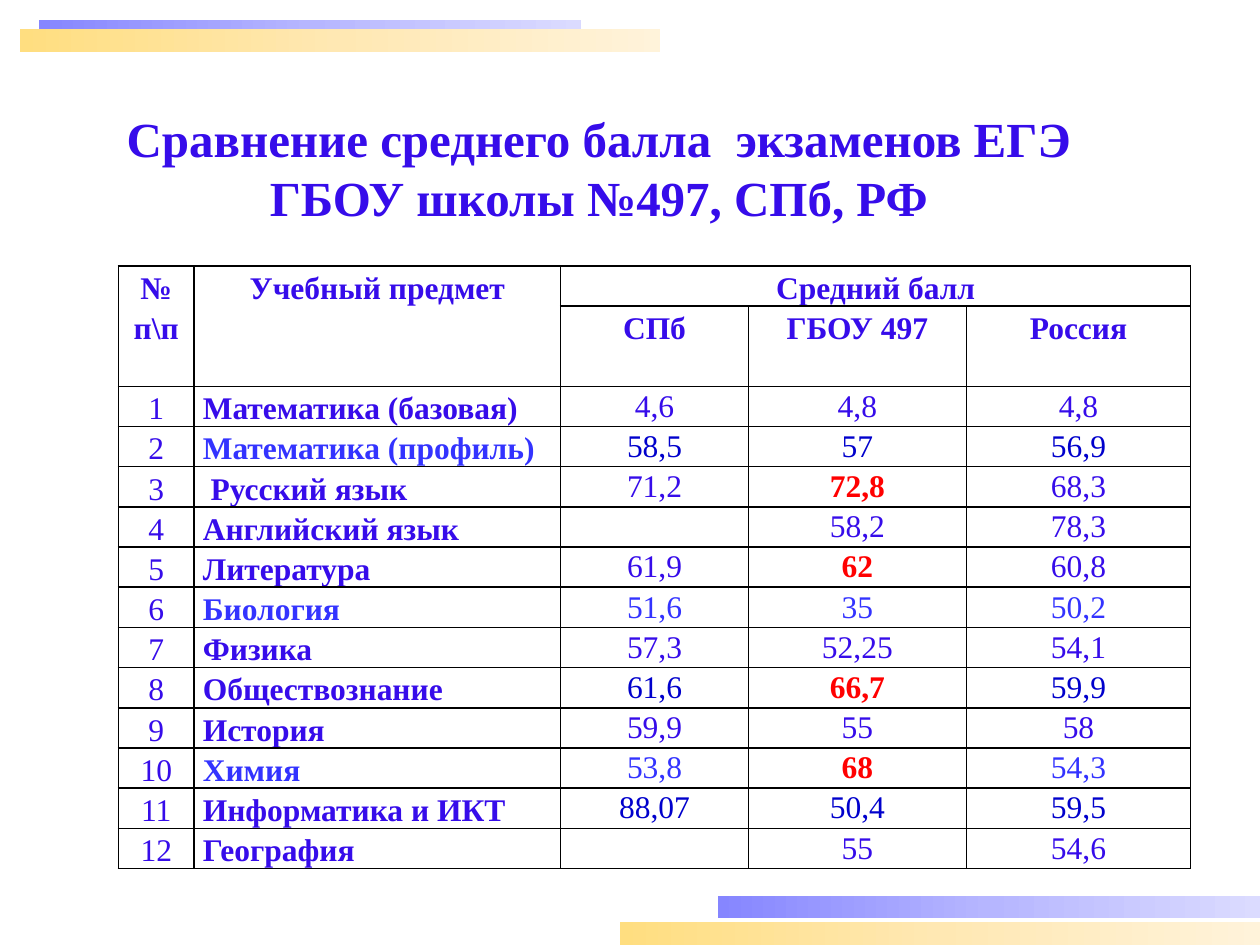
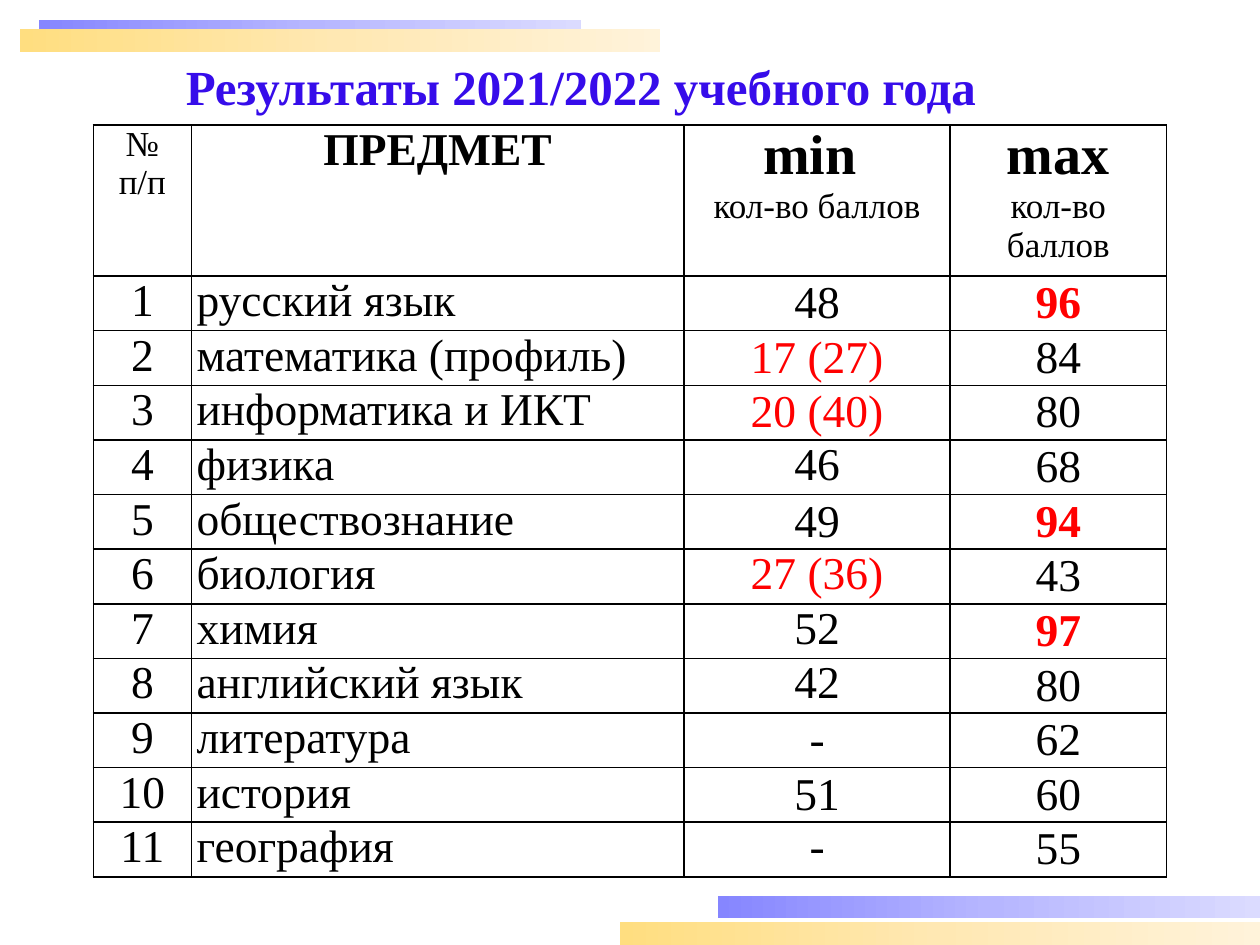
from copy import deepcopy

from lxml import etree
from pptx import Presentation
from pptx.dml.color import RGBColor
from pptx.enum import shapes, text
from pptx.oxml.ns import qn
from pptx.util import Inches, Pt

FONT = "Times New Roman"
INDIGO = RGBColor(0x36, 0x0C, 0xEA)
BLUE = RGBColor(0x33, 0x33, 0xFF)
NAVY = RGBColor(0x00, 0x00, 0xCC)
RED = RGBColor(0xFF, 0x00, 0x00)
BLACK = RGBColor(0x00, 0x00, 0x00)
VIOLET_FADE = [RGBColor.from_string(c) for c in ("8686FF", "B6B6FF", "DBDBFF")]
YELLOW_FADE = [RGBColor.from_string(c) for c in ("FFDE80", "FFE8B3", "FFF3DA")]

CENTER, LEFT = text.PP_ALIGN.CENTER, text.PP_ALIGN.LEFT
TOP, MIDDLE = text.MSO_ANCHOR.TOP, text.MSO_ANCHOR.MIDDLE

# left, top, width, colours
BANDS = [
    (0.31, 0.16, 4.3, VIOLET_FADE),
    (0.16, 0.23, 5.08, YELLOW_FADE),
    (5.7, 7.11, 4.3, VIOLET_FADE),
    (4.92, 7.32, 5.08, YELLOW_FADE),
]
BAND_HEIGHT = 0.18

TITLE_STYLE = {"size": Pt(28), "bold": True, "color": INDIGO}
LOOSE_LINE = Pt(22.9)

COMPARISON = {
    "title": ["Сравнение среднего балла  экзаменов ЕГЭ ", "ГБОУ школы №497, СПб, РФ "],
    "title_at": (-0.2, 0.86),
    "table_at": (0.94, 2.11),
    "columns": [0.6, 2.91, 1.49, 1.73, 1.78],
    "header_rows": [0.32, 0.63],
    "height": 4.78,
}
# row, column, lines
COMPARISON_HEADER = [
    (0, 0, ["№", "п\\п"]),
    (0, 1, ["Учебный предмет"]),
    (0, 2, ["Средний балл"]),
    (1, 2, ["СПб"]),
    (1, 3, ["ГБОУ 497"]),
    (1, 4, ["Россия"]),
]
COMPARISON_MERGES = [((0, 0), (1, 0)), ((0, 1), (1, 1)), ((0, 2), (0, 4))]
# subject, its colour, score colour, scores in city / school / country
AVERAGES = [
    ("Математика (базовая)", INDIGO, INDIGO, ("4,6", "4,8", "4,8")),
    ("Математика (профиль)", BLUE, NAVY, ("58,5", "57", "56,9")),
    (" Русский язык", INDIGO, INDIGO, ("71,2", "72,8", "68,3")),
    ("Английский язык", INDIGO, INDIGO, ("", "58,2", "78,3")),
    ("Литература", INDIGO, INDIGO, ("61,9", "62", "60,8")),
    ("Биология", BLUE, BLUE, ("51,6", "35", "50,2")),
    ("Физика", INDIGO, INDIGO, ("57,3", "52,25", "54,1")),
    ("Обществознание", INDIGO, NAVY, ("61,6", "66,7", "59,9")),
    ("История", INDIGO, INDIGO, ("59,9", "55", "58")),
    ("Химия", BLUE, BLUE, ("53,8", "68", "54,3")),
    ("Информатика и ИКТ", INDIGO, NAVY, ("88,07", "50,4", "59,5")),
    ("География", INDIGO, INDIGO, ("", "55", "54,6")),
]
SCHOOL_LEADS = {"72,8", "62", "66,7", "68"}

RESULTS = {
    "title": ["Результаты 2021/2022 учебного года"],
    "title_at": (-0.39, 0.21),
    "table_at": (0.74, 0.99),
    "columns": [0.78, 3.91, 2.11, 1.72],
    "header_rows": [1.2],
    "height": 5.97,
}
# (line, size, bold) for each column
RESULTS_HEADER = [
    [("№", 20, False), ("п/п", 20, False)],
    [("ПРЕДМЕТ", 26, True)],
    [("min ", 32, True), ("кол-во баллов", 20, False)],
    [("max", 32, True), ("кол-во баллов", 20, False)],
]
# subject, min, max, anchor of min
EXTREMES = [
    ("русский язык", "48", "96", MIDDLE),
    ("математика (профиль)", "17 (27)", "84", MIDDLE),
    ("информатика и ИКТ", "20 (40)", "80", MIDDLE),
    ("физика", "46", "68", TOP),
    ("обществознание", "49", "94", MIDDLE),
    ("биология", "27 (36)", "43", TOP),
    ("химия", "52", "97", TOP),
    ("английский язык", "42", "80", TOP),
    ("литература", "-", "62", MIDDLE),
    ("история", "51", "60", MIDDLE),
    ("география", "-", "55", TOP),
]
HIGH_SCORE = 90


def style(size, color, bold=False):
    return {"size": Pt(size), "bold": bold, "color": color}


def write(frame, lines, align=CENTER, spacing=None):
    """Fill a text frame with (line, style) pairs, one paragraph each."""
    for i, (line, look) in enumerate(lines):
        paragraph = frame.add_paragraph() if i else frame.paragraphs[0]
        paragraph.alignment = align
        if spacing:
            paragraph.line_spacing = spacing
        run = paragraph.add_run()
        run.text = line
        run.font.name = FONT
        for key, value in look.items():
            if key == "color":
                run.font.color.rgb = value
            else:
                setattr(run.font, key, value)


def add_band(slide, left, top, width, colors):
    band = slide.shapes.add_shape(
        shapes.MSO_SHAPE.RECTANGLE,
        Inches(left), Inches(top), Inches(width), Inches(BAND_HEIGHT))
    band.shadow.inherit = False
    band.line.fill.background()
    band.fill.gradient()
    band.fill.gradient_angle = 0
    stops = band._element.spPr.find(".//" + qn("a:gsLst"))
    stops.insert(1, deepcopy(stops[0]))
    for stop, position, color in zip(band.fill.gradient_stops, (0, 0.5, 1), colors):
        stop.position = position
        stop.color.rgb = color


def add_borders(cell):
    properties = cell._tc.get_or_add_tcPr()
    for side in ("a:lnL", "a:lnR", "a:lnT", "a:lnB"):
        border = etree.SubElement(properties, qn(side), w=str(Pt(1)))
        fill = etree.SubElement(border, qn("a:solidFill"))
        etree.SubElement(fill, qn("a:srgbClr"), val=str(BLACK))


def add_table(slide, plan, body_count, margin):
    heads, widths = plan["header_rows"], plan["columns"]
    body_height = (plan["height"] - sum(heads)) / body_count
    heights = heads + [body_height] * body_count
    left, top = plan["table_at"]
    table = slide.shapes.add_table(
        len(heights), len(widths), Inches(left), Inches(top),
        Inches(sum(widths)), Inches(plan["height"])).table
    table.first_row = table.horz_banding = False
    for column, width in zip(table.columns, widths):
        column.width = Inches(width)
    for row, height in zip(table.rows, heights):
        row.height = Inches(height)
    for cell in table.iter_cells():
        cell.margin_left = cell.margin_right = Inches(margin)
        cell.margin_top = cell.margin_bottom = 0
        add_borders(cell)
        cell.fill.background()
    return table


def fill_cell(cell, lines, anchor=TOP, **layout):
    cell.vertical_anchor = anchor
    write(cell.text_frame, lines, **layout)


def start_slide(prs, plan):
    """Add a blank slide with the bands and the title."""
    slide = prs.slides.add_slide(prs.slide_layouts[6])
    for band in BANDS:
        add_band(slide, *band)
    left, top = plan["title_at"]
    title = slide.shapes.add_textbox(
        Inches(left), Inches(top), Inches(10), Inches(0.94)).text_frame
    title.word_wrap = True
    title.vertical_anchor = MIDDLE
    write(title, [(line, TITLE_STYLE) for line in plan["title"]])
    return slide


def build_comparison(prs):
    table = add_table(start_slide(prs, COMPARISON), COMPARISON, len(AVERAGES), 0.07)
    for first, last in COMPARISON_MERGES:
        table.cell(*first).merge(table.cell(*last))
    for row, column, lines in COMPARISON_HEADER:
        fill_cell(table.cell(row, column),
                  [(line, style(18, INDIGO, True)) for line in lines], spacing=LOOSE_LINE)

    for number, (subject, subject_color, score_color, scores) in enumerate(AVERAGES, 1):
        row = number + 1
        fill_cell(table.cell(row, 0), [(str(number), style(18, INDIGO))],
                  MIDDLE, spacing=LOOSE_LINE)
        fill_cell(table.cell(row, 1), [(subject, style(18, subject_color, True))],
                  MIDDLE, align=LEFT, spacing=LOOSE_LINE)
        for column, score in enumerate(scores, 2):
            if not score:
                continue
            leads = column == 3 and score in SCHOOL_LEADS
            look = style(18, RED if leads else score_color, leads)
            fill_cell(table.cell(row, column), [(score, look)], MIDDLE)


def build_results(prs):
    table = add_table(start_slide(prs, RESULTS), RESULTS, len(EXTREMES), 0.04)
    for column, lines in enumerate(RESULTS_HEADER):
        cell = table.cell(0, column)
        if column > 1:
            cell.margin_left = cell.margin_right = Inches(0.07)
        fill_cell(cell, [(line, style(size, BLACK, bold)) for line, size, bold in lines])

    plain = style(26, BLACK)
    for row, (subject, lowest, highest, anchor) in enumerate(EXTREMES, 1):
        failed = "(" in lowest
        high = highest.isdigit() and int(highest) > HIGH_SCORE
        fill_cell(table.cell(row, 0), [(str(row), plain)])
        fill_cell(table.cell(row, 1), [(subject, plain)], align=LEFT)
        fill_cell(table.cell(row, 2),
                  [(lowest, style(26, RED if failed else BLACK))], anchor)
        fill_cell(table.cell(row, 3),
                  [(highest, style(26, RED if high else BLACK, high))], MIDDLE)


def main():
    prs = Presentation()
    prs.slide_width, prs.slide_height = Inches(10), Inches(7.5)
    build_comparison(prs)
    build_results(prs)
    prs.save("out.pptx")


if __name__ == "__main__":
    main()
